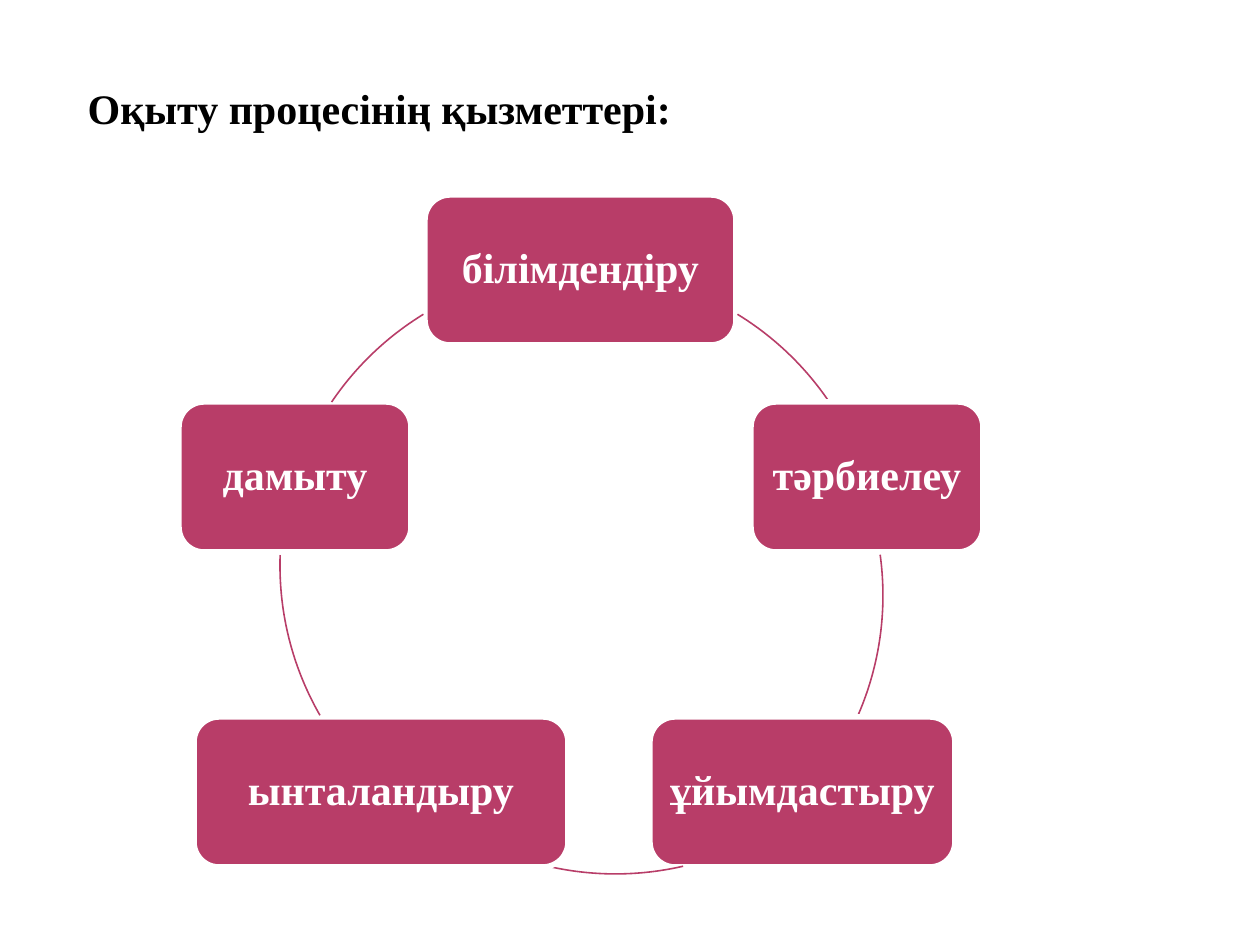
from dataclasses import dataclass

from pptx import Presentation
from pptx.dml.color import RGBColor
from pptx.enum.shapes import MSO_SHAPE
from pptx.enum.text import MSO_ANCHOR, MSO_AUTO_SIZE, PP_ALIGN
from pptx.util import Emu, Pt

ROUNDED, ARC = MSO_SHAPE.ROUNDED_RECTANGLE, MSO_SHAPE.ARC
TOP, MIDDLE = MSO_ANCHOR.TOP, MSO_ANCHOR.MIDDLE
LEFT, CENTER = PP_ALIGN.LEFT, PP_ALIGN.CENTER
FIT_SHAPE = MSO_AUTO_SIZE.SHAPE_TO_FIT_TEXT

PX_PER_INCH = 126
TITLE_ONLY = 5
BOX_HEIGHT = 150
CIRCLE = 601

# Text, left, top and width of each function, clockwise from the top
FUNCTIONS = [
    ("білімдендіру", 425, 195, 311),
    ("тəрбиелеу", 751, 402, 232),
    ("ұйымдастыру", 650, 717, 305),
    ("ынталандыру", 194, 717, 374),
    ("дамыту", 179, 402, 232),
]
# Left and top of the circle, then start and end angle of the link after each function
LINKS = [
    (280, 270, 301.5, 325.9),
    (282, 295, 352.2, 23.3),
    (315, 273, 77, 103),
    (280, 265, 150.1, 182),
    (280, 270, 214.1, 238.5),
]


@dataclass(frozen=True)
class Theme:
    accent: RGBColor = RGBColor(0xB8, 0x3D, 0x68)
    light: RGBColor = RGBColor(0xFF, 0xFF, 0xFF)
    dark: RGBColor = RGBColor(0x00, 0x00, 0x00)
    font: str = "Times New Roman"
    text_size: float = 24
    border: float = 3.15
    link: float = 0.9


def px(length):
    return Emu(round(length * 914400 / PX_PER_INCH))


class CycleSlide:
    def __init__(self, slide, theme):
        self.slide = slide
        self.theme = theme

    def set_text(self, frame, text, color, align, anchor):
        frame.word_wrap = False
        frame.vertical_anchor = anchor
        frame.text = text
        paragraph = frame.paragraphs[0]
        paragraph.alignment = align
        font = paragraph.font
        font.name = self.theme.font
        font.size = Pt(self.theme.text_size)
        font.bold = True
        font.color.rgb = color
        return paragraph

    def title(self, text, left, top, width, height):
        heading = self.slide.shapes.title
        heading.left, heading.top = px(left), px(top)
        heading.width, heading.height = px(width), px(height)
        self.set_text(heading.text_frame, text, self.theme.dark, LEFT, TOP)
        heading.text_frame.auto_size = FIT_SHAPE

    def shape(self, kind, left, top, width, height, line_color, line_width):
        shape = self.slide.shapes.add_shape(
            kind, px(left), px(top), px(width), px(height))
        shape.shadow.inherit = False
        shape.line.color.rgb = line_color
        shape.line.width = Pt(line_width)
        return shape

    def function_box(self, text, left, top, width):
        box = self.shape(ROUNDED, left, top, width, BOX_HEIGHT,
                         self.theme.light, self.theme.border)
        box.fill.solid()
        box.fill.fore_color.rgb = self.theme.accent
        label = self.set_text(box.text_frame, text, self.theme.light, CENTER, MIDDLE)
        label.line_spacing = 0.9

    def link(self, left, top, start, end):
        """Draw a clockwise arc; angles are in degrees from three o'clock."""
        arc = self.shape(ARC, left, top, CIRCLE, CIRCLE,
                         self.theme.accent, self.theme.link)
        arc.fill.background()
        # Angles are stored in 1/60000 degree, adjustments in 1/100000
        for index, angle in enumerate((start, end)):
            arc.adjustments[index] = angle * 0.6


def main():
    deck = Presentation()
    deck.slide_width, deck.slide_height = px(1260), px(945)
    slide = deck.slides.add_slide(deck.slide_layouts[TITLE_ONLY])
    cycle = CycleSlide(slide, Theme())
    cycle.title("Оқыту процесінің қызметтері:", 75, 76, 625, 63)
    for function, link in zip(FUNCTIONS, LINKS):
        cycle.function_box(*function)
        cycle.link(*link)
    deck.save("out.pptx")


if __name__ == "__main__":
    main()
